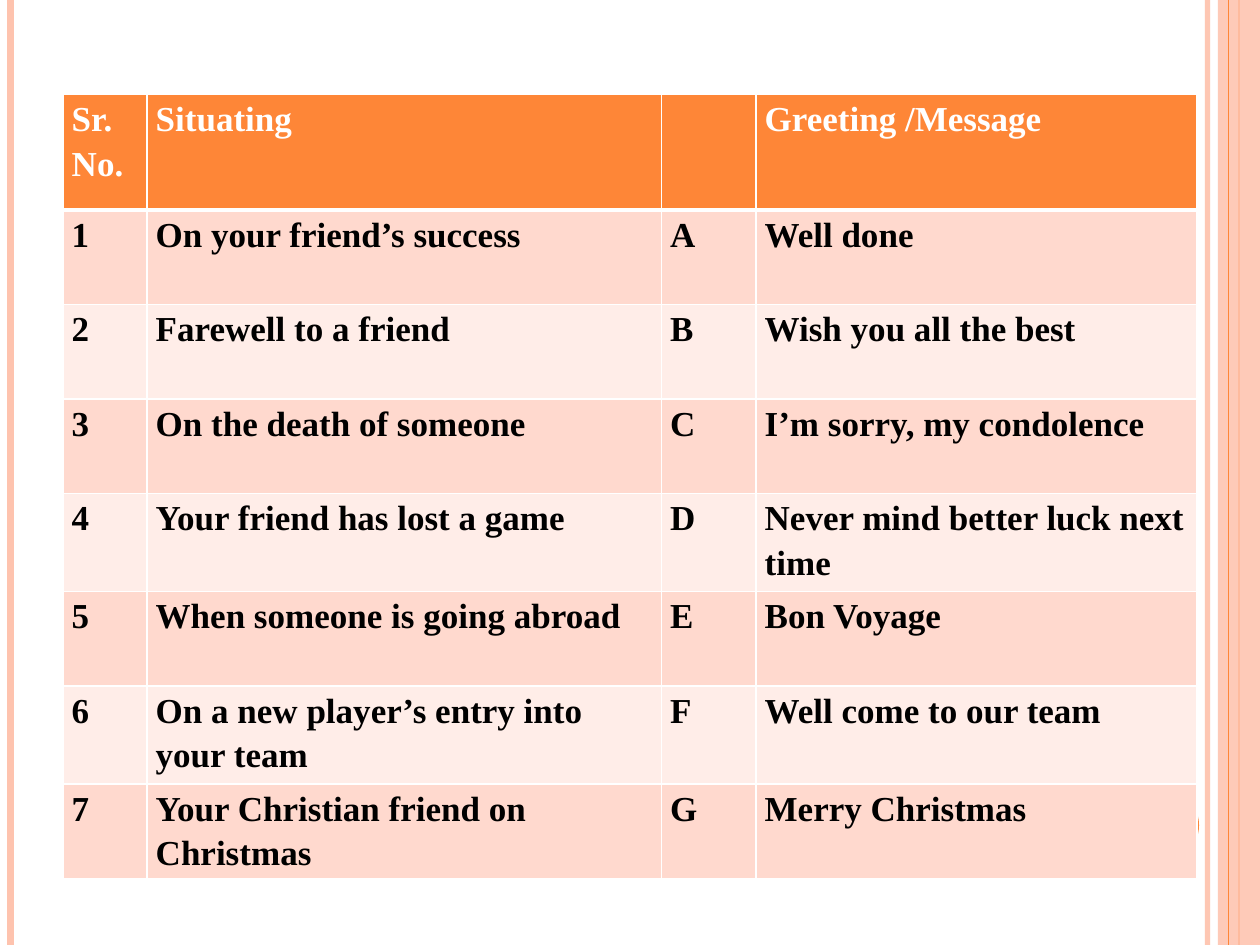
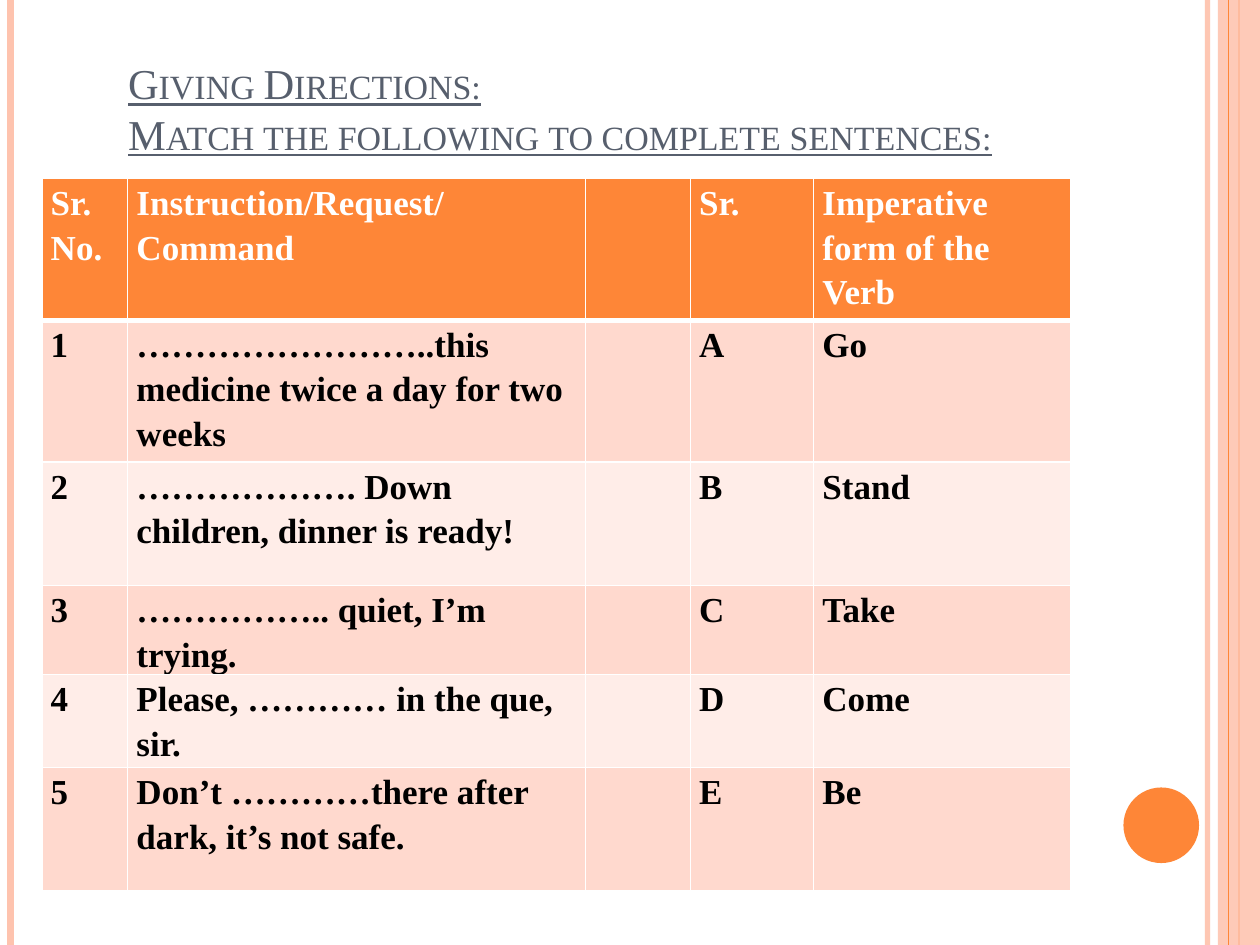
from lxml.etree import SubElement
from pptx import Presentation
from pptx.dml.color import RGBColor
from pptx.enum.shapes import MSO_CONNECTOR as CONNECTOR, MSO_SHAPE as SHAPE
from pptx.enum.text import MSO_ANCHOR as ANCHOR, PP_ALIGN as ALIGN
from pptx.oxml.ns import qn
from pptx.util import Pt

ORANGE = RGBColor(0xFE, 0x86, 0x37)
PEACH = RGBColor(0xFE, 0xC3, 0xAE)
ROW_DARK = RGBColor(0xFF, 0xD9, 0xCE)
ROW_LIGHT = RGBColor(0xFF, 0xED, 0xE8)
SLATE = RGBColor(0x57, 0x5F, 0x6D)
WHITE = RGBColor(0xFF, 0xFF, 0xFF)
BLACK = RGBColor(0, 0, 0)
FONT = "Times New Roman"
WIDTH, HEIGHT = 720, 540

GREETINGS = [
    ("Sr. No.", "Situating", "", "Greeting /Message"),
    ("1", "On your friend’s success", "A", "Well done"),
    ("2", "Farewell to a friend", "B", "Wish you all the best"),
    ("3", "On the death of someone", "C", "I’m sorry, my condolence"),
    ("4", "Your friend has lost a game", "D", "Never mind better luck next time"),
    ("5", "When someone is going abroad", "E", "Bon Voyage"),
    ("6", "On a new player’s entry into your team", "F", "Well come to our team"),
    ("7", "Your Christian friend on Christmas", "G", "Merry Christmas"),
]
DIRECTIONS = [
    ("Sr. No.", "Instruction/Request/Command", "", "Sr.", "Imperative form of the Verb"),
    ("1", "……………………..this medicine twice a day for two weeks", "", "A", "Go"),
    ("2", "………………. Down children, dinner is ready!", "", "B", "Stand"),
    ("3", "…………….. quiet, I’m trying.", "", "C", "Take"),
    ("4", "Please, ………… in the que, sir.", "", "D", "Come"),
    ("5", "Don’t …………there after dark, it’s not safe.", "", "E", "Be"),
]


def set_alpha(part, percent):
    color = next(part.iter(qn("a:srgbClr")))
    SubElement(color, qn("a:alpha"), val=str(percent * 1000))


def add_stripe(slide, x, color, width):
    stripe = slide.shapes.add_connector(CONNECTOR.STRAIGHT, Pt(x), Pt(0), Pt(x), Pt(HEIGHT))
    stripe.line.color.rgb = color
    stripe.line.width = Pt(width)
    SubElement(stripe._element.spPr, qn("a:effectLst"))
    return stripe


def add_filled(slide, kind, box, color):
    filled = slide.shapes.add_shape(kind, *map(Pt, box))
    filled.shadow.inherit = False
    filled.fill.solid()
    filled.fill.fore_color.rgb = color
    filled.line.fill.background()
    return filled


def add_frame(slide):
    inner = add_stripe(slide, 690, PEACH, 3)
    set_alpha(inner._element.spPr, 93)
    add_stripe(slide, 6, PEACH, 4.5)
    add_stripe(slide, 708, ORANGE, 1.5)
    band = add_filled(slide, SHAPE.RECTANGLE, (696, 0, WIDTH - 696, HEIGHT), PEACH)
    set_alpha(band._element.spPr, 87)
    add_stripe(slide, 702, ORANGE, 0.75)
    add_filled(slide, SHAPE.OVAL, (642, 450, 43.2, 43.2), ORANGE)


def style_run(run, size, color):
    run.font.name = FONT
    run.font.size = Pt(size)
    run.font.color.rgb = color


def fill_title(slide, box, lines):
    title = slide.shapes.title
    title.left, title.top, title.width, title.height = map(Pt, box)
    frame = title.text_frame
    frame.vertical_anchor = ANCHOR.BOTTOM
    frame.margin_bottom = Pt(35)
    heading = frame.paragraphs[0]
    heading.alignment = ALIGN.LEFT
    heading.line_spacing = Pt(29)
    for number, line in enumerate(lines):
        if number:
            heading.add_line_break()
        run = heading.add_run()
        run.text = line
        style_run(run, 24.3, SLATE)
        run.font.underline = True
        run.font._element.set("cap", "small")


def add_borders(cell, top, bottom):
    properties = cell._tc.get_or_add_tcPr()
    for side, width in (("L", 1), ("R", 1), ("T", top), ("B", bottom)):
        edge = SubElement(properties, qn(f"a:ln{side}"), w=str(Pt(width)))
        paint = SubElement(edge, qn("a:solidFill"))
        SubElement(paint, qn("a:srgbClr"), val=str(WHITE))


def fill_cell(cell, words, row):
    add_borders(cell, 3 if row == 1 else 1, 3 if row == 0 else 1)
    cell.fill.solid()
    cell.fill.fore_color.rgb = ORANGE if row == 0 else (ROW_LIGHT, ROW_DARK)[row % 2]
    cell.margin_left = cell.margin_right = Pt(5)
    cell.margin_top = cell.margin_bottom = Pt(0)
    if words:
        entry = cell.text_frame.paragraphs[0]
        entry.line_spacing = 1.15
        run = entry.add_run()
        run.text = words
        style_run(run, 20, BLACK if row else WHITE)
        run.font.bold = True


def add_match_table(slide, left, top, widths, heights, entries):
    box = (left, top, sum(widths), sum(heights))
    table = slide.shapes.add_table(len(heights), len(widths), *map(Pt, box)).table
    for column, width in zip(table.columns, widths):
        column.width = Pt(width)
    for row, (height, words) in enumerate(zip(heights, entries)):
        table.rows[row].height = Pt(height)
        for column, text in enumerate(words):
            fill_cell(table.cell(row, column), text, row)


def add_greetings_slide(deck):
    slide = deck.slides.add_slide(deck.slide_layouts[6])
    add_frame(slide)
    add_match_table(slide, 36, 54, (48, 294, 54, 252),
                    (66, 54, 54, 54, 56, 54, 56, 54), GREETINGS)


def add_directions_slide(deck):
    slide = deck.slides.add_slide(deck.slide_layouts[5])
    add_frame(slide)
    fill_title(slide, (66, 36, 588, 90),
               ("Giving Directions:", "Match the following to complete sentences:"))
    add_match_table(slide, 24, 102, (49, 261.5, 60, 70.5, 147),
                    (81, 81, 70.5, 46, 53, 70.5), DIRECTIONS)


def main():
    deck = Presentation()
    deck.slide_width, deck.slide_height = Pt(WIDTH), Pt(HEIGHT)
    add_greetings_slide(deck)
    add_directions_slide(deck)
    deck.save("out.pptx")


if __name__ == "__main__":
    main()
